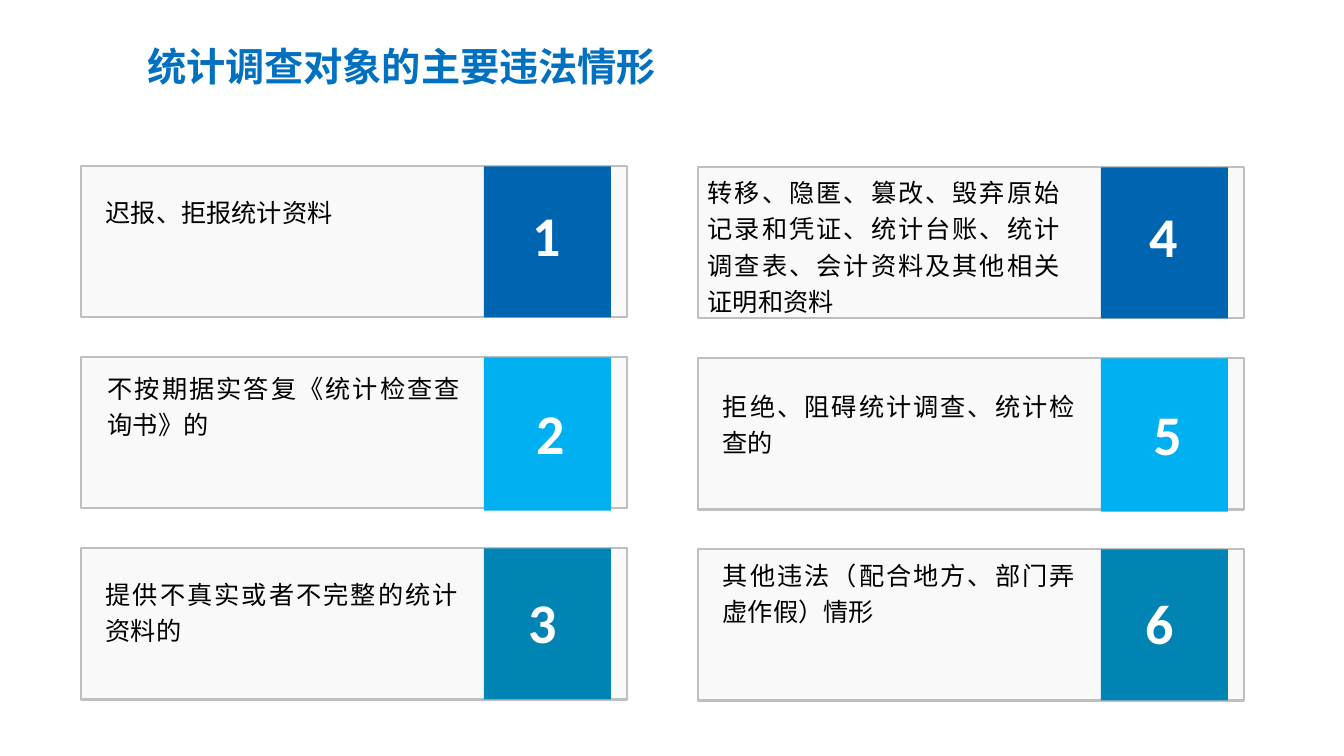
from lxml.etree import SubElement
from pptx import Presentation
from pptx.dml.color import RGBColor
from pptx.enum.shapes import MSO_SHAPE
from pptx.enum.text import MSO_AUTO_SIZE as AutoSize, PP_ALIGN as Align
from pptx.oxml.ns import qn
from pptx.util import Inches, Pt

# Colours
TITLE_BLUE = RGBColor(0x00, 0x70, 0xC0)
CARD_GREY = RGBColor(0xF2, 0xF2, 0xF2)
BORDER_GREY = RGBColor(0xBF, 0xBF, 0xBF)
BLACK = RGBColor(0x00, 0x00, 0x00)
WHITE = RGBColor(0xFF, 0xFF, 0xFF)
ROW_COLOURS = [
    RGBColor(0x00, 0x65, 0xB0),
    RGBColor(0x00, 0xB0, 0xF0),
    RGBColor(0x00, 0x84, 0xB4),
]

# Grid of cards, in inches
GRID_LEFT, GRID_TOP = 0.8, 1.65
COLUMN_PITCH, ROW_PITCH = 6.12, 1.895
COLUMN_DROP = 0.01
CARD_WIDTH, CARD_HEIGHT = 5.42, 1.5
TILE_OFFSET, TILE_WIDTH = 4.0, 1.26
TILE_HEIGHTS = [1.5, 1.52, 1.5]
NUMBER_OFFSETS = [(4.38, 0.29), (4.42, 0.36), (4.34, 0.34)]

# Text formats
CHINESE, LATIN = "Noto Sans CJK SC", "Calibri"
TITLE_FORMAT = {"name": CHINESE, "size": Pt(28), "bold": True}
BODY_FORMAT = {"name": CHINESE, "size": Pt(18), "bold": False}
NUMBER_FORMAT = {"name": LATIN, "size": Pt(40), "bold": True}

# Each column lists its cards: wording, then text offset and height
COLUMNS = [
    [
        ("迟报、拒报统计资料", 0.15, 0.2, 0.46),
        ("不按期据实答复《统计检查查询书》的", 0.17, 0.05, 0.83),
        ("提供不真实或者不完整的统计资料的", 0.15, 0.2, 0.83),
    ],
    [
        ("转移、隐匿、篡改、毁弃原始记录和凭证、统计台账、统计调查表、"
         "会计资料及其他相关证明和资料", 0, -0.01, 1.55),
        ("拒绝、阻碍统计调查、统计检查的", 0.15, 0.22, 0.83),
        ("其他违法（配合地方、部门弄虚作假）情形", 0.15, 0, 0.83),
    ],
]


def add_box(shapes, left, top, width, height, colour):
    box = shapes.add_shape(MSO_SHAPE.RECTANGLE, Inches(left), Inches(top),
                           Inches(width), Inches(height))
    box.shadow.inherit = False
    box.fill.solid()
    box.fill.fore_color.rgb = colour
    box.line.fill.background()
    return box


def add_card(shapes, left, top):
    card = add_box(shapes, left, top, CARD_WIDTH, CARD_HEIGHT, CARD_GREY)
    card.line.color.rgb = BORDER_GREY
    card.line.width = Pt(1.5)
    # The grey fill is 40% opaque
    colour = card.fill._xPr.find(qn("a:solidFill"))[0]
    SubElement(colour, qn("a:alpha"), val="40000")


def add_text(shapes, left, top, width, height, text, text_format, colour,
             **paragraph_format):
    box = shapes.add_textbox(Inches(left), Inches(top),
                             Inches(width), Inches(height))
    frame = box.text_frame
    frame.word_wrap = True
    frame.auto_size = AutoSize.SHAPE_TO_FIT_TEXT
    paragraph = frame.paragraphs[0]
    for name, value in paragraph_format.items():
        setattr(paragraph, name, value)
    run = paragraph.add_run()
    run.text = text
    for name, value in text_format.items():
        setattr(run.font, name, value)
    run.font.color.rgb = colour
    # East Asian characters take their own typeface
    SubElement(run._r.get_or_add_rPr(), qn("a:ea"),
               typeface=text_format["name"])


def add_column(slide, column, cards):
    shapes = slide.shapes.add_group_shape().shapes
    left = GRID_LEFT + column * COLUMN_PITCH
    tops = [GRID_TOP + column * COLUMN_DROP + row * ROW_PITCH
            for row in range(len(cards))]

    # Cards with coloured tiles
    for top, tile_height, colour in zip(tops, TILE_HEIGHTS, ROW_COLOURS):
        add_card(shapes, left, top)
        add_box(shapes, left + TILE_OFFSET, top, TILE_WIDTH, tile_height,
                colour)

    # Wording
    for top, (text, right, down, height) in zip(tops, cards):
        add_text(shapes, left + right, top + down, 3.69, height, text,
                 BODY_FORMAT, BLACK, alignment=Align.JUSTIFY,
                 line_spacing=1.2)

    # Numbers run down each column
    first = column * len(cards) + 1
    for number, (top, (right, down)) in enumerate(
            zip(tops, NUMBER_OFFSETS), first):
        add_text(shapes, left + right, top + down, 0.7, 0.77, str(number),
                 NUMBER_FORMAT, WHITE)


def main():
    presentation = Presentation()
    presentation.slide_width = Inches(13.33)
    presentation.slide_height = Inches(7.5)
    slide = presentation.slides.add_slide(presentation.slide_layouts[6])

    add_text(slide.shapes, 1.36, 0.37, 5.75, 0.97,
             "统计调查对象的主要违法情形", TITLE_FORMAT, TITLE_BLUE)
    for column, cards in enumerate(COLUMNS):
        add_column(slide, column, cards)

    presentation.save("out.pptx")


if __name__ == "__main__":
    main()
